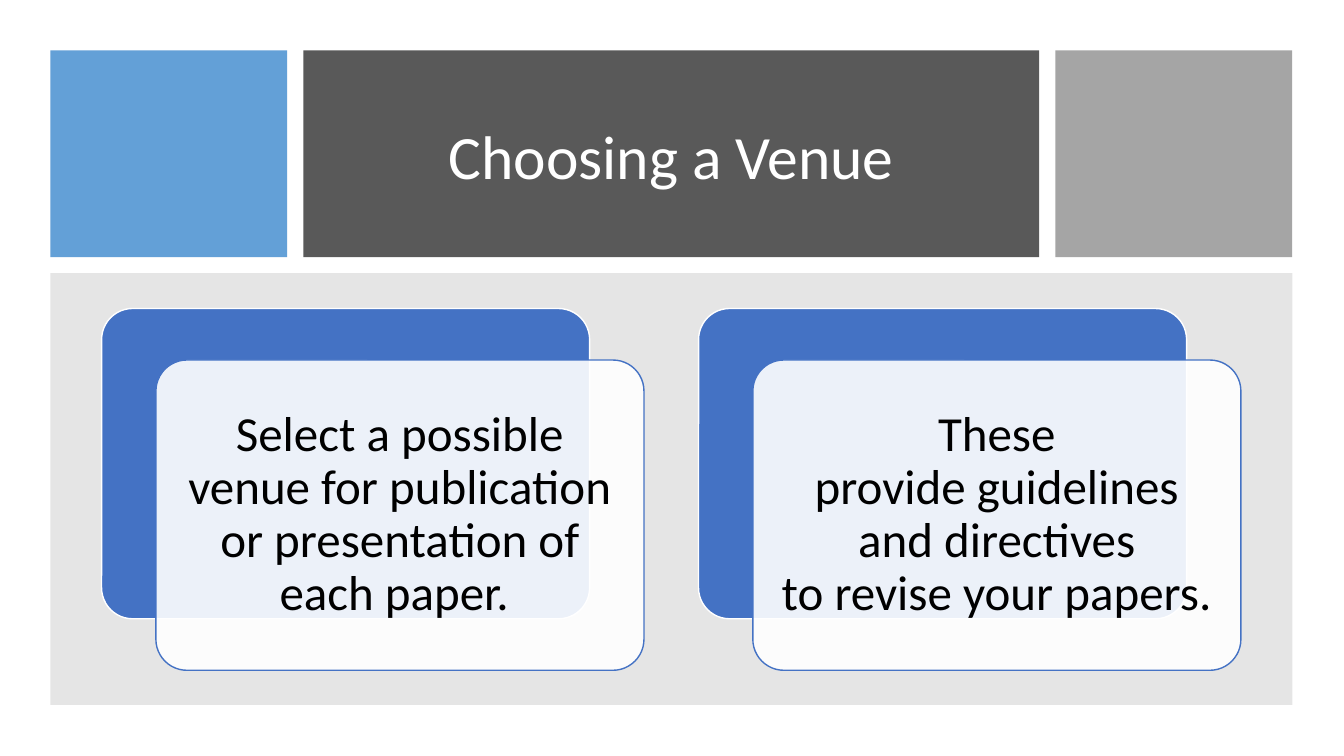
import pptx
import pptx.dml.color
import pptx.enum.shapes
import pptx.enum.text
import pptx.oxml.ns
import pptx.util
import lxml.etree

Pt = pptx.util.Pt
RECTANGLE = pptx.enum.shapes.MSO_SHAPE.RECTANGLE
ROUNDED = pptx.enum.shapes.MSO_SHAPE.ROUNDED_RECTANGLE
NO_BREAK_SPACE = chr(160)


def add_box(kind, left, top, width, height, fill, opacity=100, line=None):
    """Add a filled shape; opacity is a percentage, and line a colour or None."""
    shape = slide.shapes.add_shape(kind, Pt(left), Pt(top), Pt(width), Pt(height))
    shape.shadow.inherit = False
    shape.fill.solid()
    shape.fill.fore_color.rgb = pptx.dml.color.RGBColor.from_string(fill)
    if opacity < 100:
        color = shape.element.spPr.find(".//" + pptx.oxml.ns.qn("a:srgbClr"))
        alpha = lxml.etree.SubElement(color, pptx.oxml.ns.qn("a:alpha"))
        alpha.set("val", str(opacity * 1000))
    if line:
        shape.line.color.rgb = pptx.dml.color.RGBColor.from_string(line)
        shape.line.width = Pt(1)
    else:
        shape.line.fill.background()
    if kind == ROUNDED:
        shape.adjustments[0] = 0.1
    return shape


def write_text(shape, text, size, color, margins):
    """Write one centred paragraph; margins are horizontal and vertical."""
    frame = shape.text_frame
    frame.word_wrap = True
    frame.auto_size = pptx.enum.text.MSO_AUTO_SIZE.NONE
    frame.vertical_anchor = pptx.enum.text.MSO_ANCHOR.MIDDLE
    frame.margin_left = frame.margin_right = Pt(margins[0])
    frame.margin_top = frame.margin_bottom = Pt(margins[1])
    paragraph = frame.paragraphs[0]
    paragraph.alignment = pptx.enum.text.PP_ALIGN.CENTER
    paragraph.line_spacing = 0.9
    run = paragraph.add_run()
    run.text = text
    run.font.name = "Calibri"
    run.font.size = Pt(size)
    run.font.color.rgb = pptx.dml.color.RGBColor.from_string(color)


presentation = pptx.Presentation()
presentation.slide_width = Pt(960)
presentation.slide_height = Pt(540)
slide = presentation.slides.add_slide(presentation.slide_layouts[5])

# Header band: two accent blocks around the title panel
margin, gap = 36, 11.5
header_height, accent_width, title_width = 147.6, 169.2, 525.6
header_left = margin
for width, fill, opacity in (
    (accent_width, "5B9BD5", 95),
    (title_width, "595959", 100),
    (accent_width, "A5A5A5", 100),
):
    header_block = add_box(RECTANGLE, header_left, margin, width, header_height, fill, opacity)
    header_left += width + gap

title = slide.shapes.title
title.left, title.top = Pt(239.8), Pt(57.6)
title.width, title.height = Pt(479.5), Pt(112.3)
write_text(title, "Choosing a Venue", size=44, color="FFFFFF", margins=(7.2, 3.6))
header_block.element.addnext(title.element)

# Body panel with two overlapping card pairs
add_box(RECTANGLE, margin, 195.2, 887.2, 308.4, "808080", opacity=20)
card_width, card_height = 348.6, 221.6
cards_left, cards_top, cards_pitch = 72.6, 220.4, 426.4
offset_x, offset_y = 38.8, 36.8
messages = (
    f"Select a possible venue for publication or presentation of each paper.{NO_BREAK_SPACE}",
    f"These provide{NO_BREAK_SPACE}guidelines and directives "
    f"to{NO_BREAK_SPACE}revise your{NO_BREAK_SPACE}papers.",
)
for index, message in enumerate(messages):
    left = cards_left + index * cards_pitch
    add_box(ROUNDED, left, cards_top, card_width, card_height, "4472C4", line="FFFFFF")
    front_card = add_box(ROUNDED, left + offset_x, cards_top + offset_y,
                         card_width, card_height, "FFFFFF", opacity=90, line="4472C4")
    write_text(front_card, message, size=35, color="000000", margins=(10.8, 10.8))

presentation.save("out.pptx")
